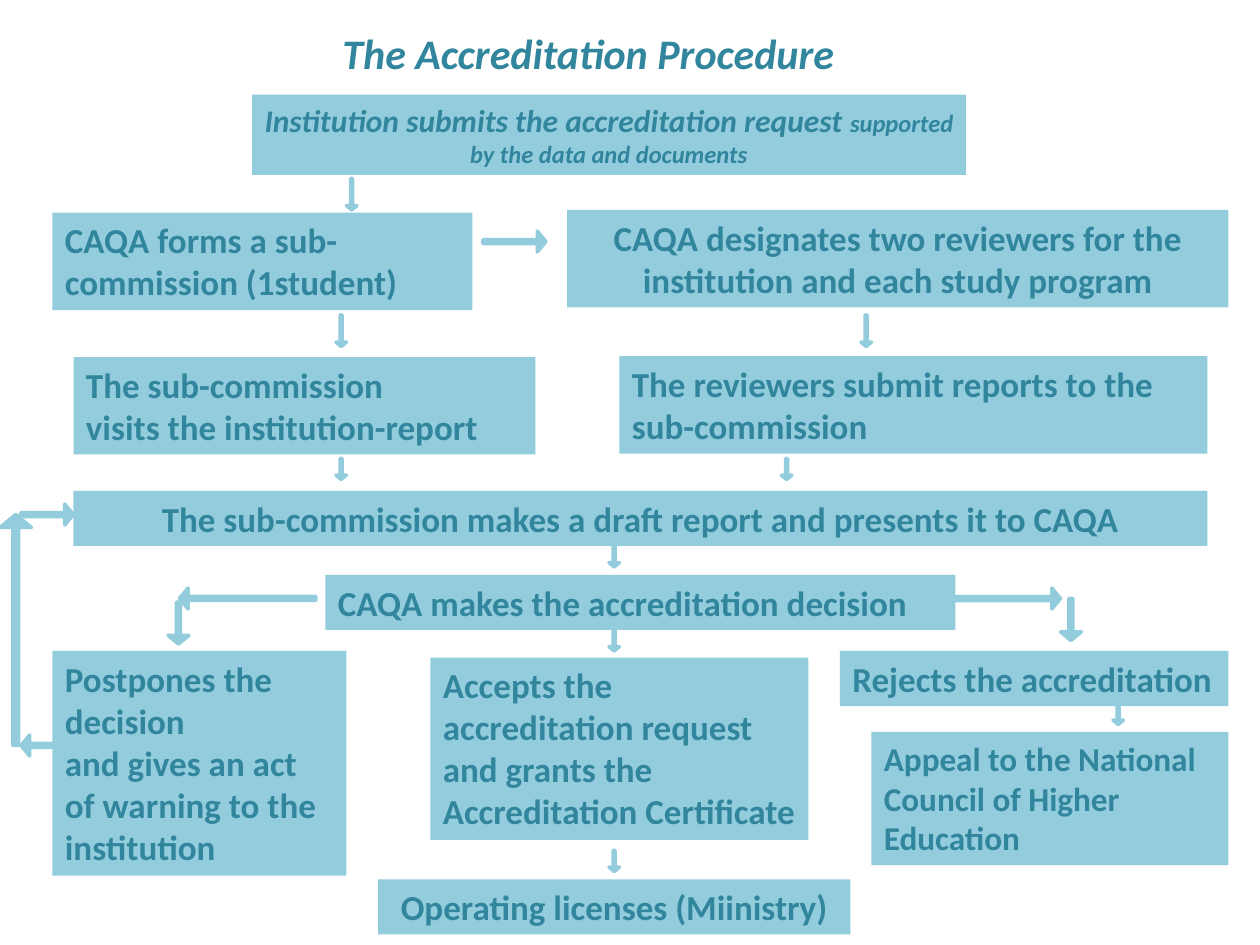
from pptx import Presentation, util as u
from pptx.dml import color
from pptx.enum import shapes, text

Pt = u.Pt
LEFT, MID = text.PP_ALIGN.LEFT, text.PP_ALIGN.CENTER


def rgb(code):
    return color.RGBColor.from_string(code)


class Chart:
    """Style and current slide of the flow chart."""
    fill, ink = "93CDDD", "31859C"
    font = {"name": "Calibri", "bold": True}
    frame = {"auto_size": text.MSO_AUTO_SIZE.SHAPE_TO_FIT_TEXT,
             "vertical_anchor": text.MSO_ANCHOR.TOP}
    shaft, head = 0.187, 0.412

    def __init__(self, slide):
        self.slide = slide

    def label(self, shape, paras, align=LEFT, wrap=True, italic=False):
        """Each paragraph is a list of (words, size) runs."""
        tf = shape.text_frame
        for key, val in {**self.frame, "word_wrap": wrap}.items():
            setattr(tf, key, val)
        for i, runs in enumerate(paras):
            p = tf.add_paragraph() if i else tf.paragraphs[0]
            p.alignment = align
            for words, size in runs:
                r = p.add_run()
                r.text = words
                look = {**self.font, "size": Pt(size), "italic": italic}
                for key, val in look.items():
                    setattr(r.font, key, val)
                r.font.color.rgb = rgb(self.ink)

    def solid(self, kind, x, y, w, h):
        shape = self.slide.shapes.add_shape(kind, Pt(x), Pt(y), Pt(w), Pt(h))
        shape.shadow.inherit = False
        shape.fill.solid()
        shape.fill.fore_color.rgb = rgb(self.fill)
        return shape

    def box(self, place, paras, **style):
        shape = self.solid(shapes.MSO_SHAPE.RECTANGLE, *place)
        shape.line.fill.background()
        self.label(shape, paras, **style)

    def title(self, place, words, size):
        shape = self.slide.shapes.add_textbox(*map(Pt, place))
        self.label(shape, [[(words, size)]], wrap=False, italic=True)

    def arrow(self, cx, cy, wide, long, turn=0):
        """Arrow about a centre; turn 0 points down, 90 left, 270 right."""
        shape = self.solid(shapes.MSO_SHAPE.DOWN_ARROW,
                           cx - wide / 2, cy - long / 2, wide, long)
        shape.adjustments[0] = self.shaft
        shape.adjustments[1] = self.head
        shape.rotation = turn
        shape.line.color.rgb = rgb(self.fill)
        shape.line.width = Pt(2)


def main():
    prs = Presentation()
    prs.slide_width, prs.slide_height = Pt(720), Pt(540)
    chart = Chart(prs.slides.add_slide(prs.slide_layouts[6]))

    # Title and request
    chart.title((188.6, 12.2, 304, 36), "The Accreditation Procedure", 24)
    chart.box((144, 54, 408, 46),
              [[("Institution submits the accreditation request ", 18),
                ("supported by the data and documents", 14)]],
              align=MID, italic=True)

    # Steps: place, alignment, size, paragraphs
    steps = [
        ((30, 121.5, 240, 55.7), LEFT, 20,
         "CAQA forms a sub-commission (1student)"),
        ((324, 120, 378, 55.7), MID, 20,
         "CAQA designates two reviewers for the institution "
         "and each study program"),
        ((42, 204, 264, 55.7), LEFT, 20,
         "The sub-commission", "visits the institution-report"),
        ((354, 203.5, 336, 55.7), LEFT, 20,
         "The reviewers submit reports to the sub-commission"),
        ((42, 280.5, 648, 31.5), MID, 20,
         "The sub-commission makes a draft report and presents it to CAQA"),
        ((186, 328.5, 360, 31.5), LEFT, 20,
         "CAQA makes the accreditation decision"),
        ((30, 372, 168, 128.4), LEFT, 20,
         "Postpones the decision",
         "and gives an act of warning to the institution"),
        ((246, 375.75, 216, 104.2), LEFT, 20,
         "Accepts the accreditation request and grants the",
         "Accreditation Certificate"),
        ((480, 372, 222, 31.5), LEFT, 20, "Rejects the accreditation"),
        ((498, 418.2, 204, 76.2), LEFT, 19,
         "Appeal to the National Council of Higher Education"),
        ((216, 502.5, 270, 31.5), MID, 20, "Operating licenses (Miinistry)"),
    ]
    for place, align, size, *lines in steps:
        chart.box(place, [[(line, size)] for line in lines], align=align)

    # Small down arrows between rows
    for cx, cy, long in [(201, 111, 18), (195, 189, 18), (495, 189, 18),
                         (195, 268, 12), (449.5, 268, 12), (351, 318, 12),
                         (351, 366, 12), (351, 492, 12), (639, 408, 12)]:
        chart.arrow(cx, cy, 6, long)

    # Sub-commission to reviewers
    chart.arrow(294, 138, 12, 36, 270)

    # Branches of the decision
    chart.arrow(141.5, 342, 12, 78, 90)
    chart.arrow(102, 356, 12, 24)
    chart.arrow(576, 342, 12, 60, 270)
    chart.arrow(612, 354, 12, 24)

    # Loop back to the draft report
    chart.arrow(21, 426, 12, 18, 90)
    chart.arrow(9, 360, 18, 132, 180)
    chart.arrow(27, 294, 12, 30, 270)

    prs.save("out.pptx")


if __name__ == "__main__":
    main()
